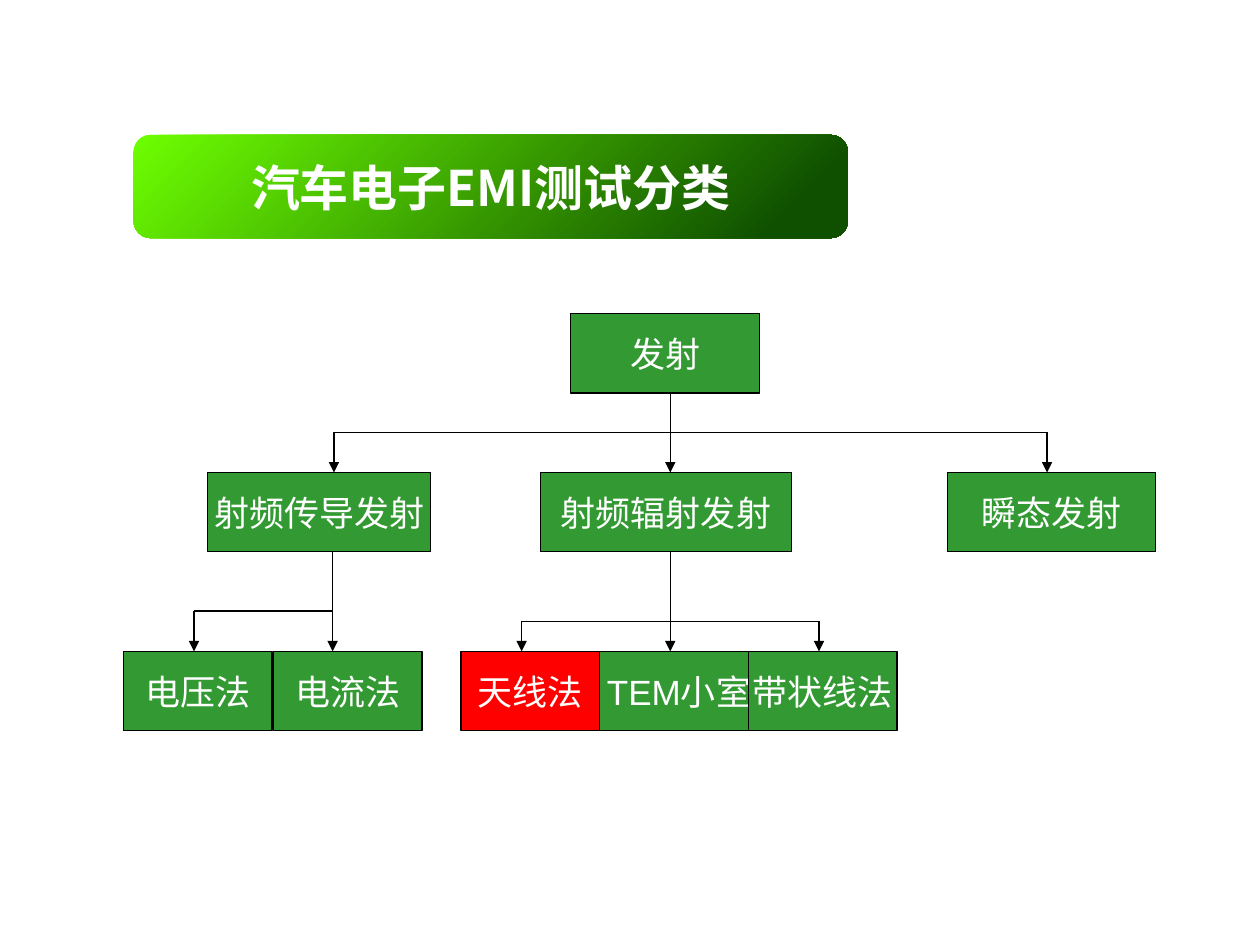
from dataclasses import dataclass

from lxml.etree import SubElement as Sub
from pptx import Presentation as Deck
from pptx.dml.color import RGBColor as Rgb
from pptx.enum.shapes import MSO_CONNECTOR as Link, MSO_SHAPE as Shape
from pptx.enum.text import MSO_ANCHOR as Anchor, PP_ALIGN as Align
from pptx.oxml.ns import qn
from pptx.util import Pt

SCALE = 9144


@dataclass(frozen=True)
class Theme:
    green: str = "339933"
    red: str = "FF0000"
    black: str = "000000"
    white: str = "FFFFFF"
    light: str = "6EFF01"
    dark: str = "0F5000"
    head: int = 28
    body: int = 20
    rule: float = 0.75
    sans: str = "Arial"
    han: str = "Noto Sans CJK SC"


def px(*nums):
    return [num * SCALE for num in nums]


def write(shape, text, *, size, font, color, bold=False, wrap=True):
    frame = shape.text_frame
    frame.word_wrap = wrap
    frame.vertical_anchor = Anchor.MIDDLE
    para = frame.paragraphs[0]
    para.alignment = Align.CENTER
    run = para.add_run()
    run.text = text
    run.font.size = Pt(size)
    run.font.bold = bold
    run.font.name = font
    run.font.color.rgb = Rgb.from_string(color)
    Sub(run.font._element, qn("a:ea"), typeface=font)


class Chart:
    def __init__(self, slide, theme):
        self.slide = slide
        self.theme = theme

    def shape(self, kind, *area):
        item = self.slide.shapes.add_shape(kind, *px(*area))
        item.shadow.inherit = False
        return item

    def title(self, text, *area):
        look = self.theme
        item = self.shape(Shape.ROUNDED_RECTANGLE, *area)
        item.line.fill.background()
        item.fill.gradient()
        item.fill.gradient_angle = 315
        stops = zip(item.fill.gradient_stops, (0, 0.9), (look.light, look.dark))
        for stop, spot, color in stops:
            stop.position = spot
            stop.color.rgb = Rgb.from_string(color)
        write(item, text, size=look.head, font=look.han, color=look.white, bold=True)

    def box(self, text, left, top, width, fill=None):
        look = self.theme
        item = self.shape(Shape.RECTANGLE, left, top, width, 63)
        item.fill.solid()
        item.fill.fore_color.rgb = Rgb.from_string(fill or look.green)
        item.line.color.rgb = Rgb.from_string(look.black)
        item.line.width = Pt(look.rule)
        write(item, text, size=look.body, font=look.sans, color=look.white, wrap=False)

    def line(self, *ends, arrow=False):
        item = self.slide.shapes.add_connector(Link.STRAIGHT, *px(*ends))
        item.line.color.rgb = Rgb.from_string(self.theme.black)
        item.line.width = Pt(self.theme.rule)
        if arrow:
            Sub(item.line._get_or_add_ln(), qn("a:tailEnd"), type="triangle")
        Sub(item._element.spPr, qn("a:effectLst"))

    def tree(self, stem, top, bar, foot, kids):
        self.line(stem, top, stem, bar)
        self.line(kids[0], bar, kids[-1], bar)
        for kid in kids:
            self.line(kid, bar, kid, foot, arrow=True)


def main():
    deck = Deck()
    deck.slide_width, deck.slide_height = px(1000, 750)
    theme = Theme()
    chart = Chart(deck.slides.add_slide(deck.slide_layouts[6]), theme)

    chart.title("汽车电子EMI测试分类", 106, 107, 567, 82)
    chart.box("发射", 453, 249, 150)

    for text, left, width in (
        ("射频传导发射", 165, 177),
        ("射频辐射发射", 429, 199),
        ("瞬态发射", 752, 165),
    ):
        chart.box(text, left, 375, width)

    for text, left, width, fill in (
        ("电压法", 98, 118, None),
        ("电流法", 217, 118, None),
        ("天线法", 366, 110, theme.red),
        ("TEM小室", 476, 126, None),
        ("带状线法", 594, 118, None),
    ):
        chart.box(text, left, 517, width, fill)

    chart.tree(532, 312, 343, 375, (265, 532, 831))
    chart.tree(264, 438, 485, 517, (154, 264))
    chart.tree(532, 438, 493, 517, (414, 532, 650))

    deck.save("out.pptx")


if __name__ == "__main__":
    main()
